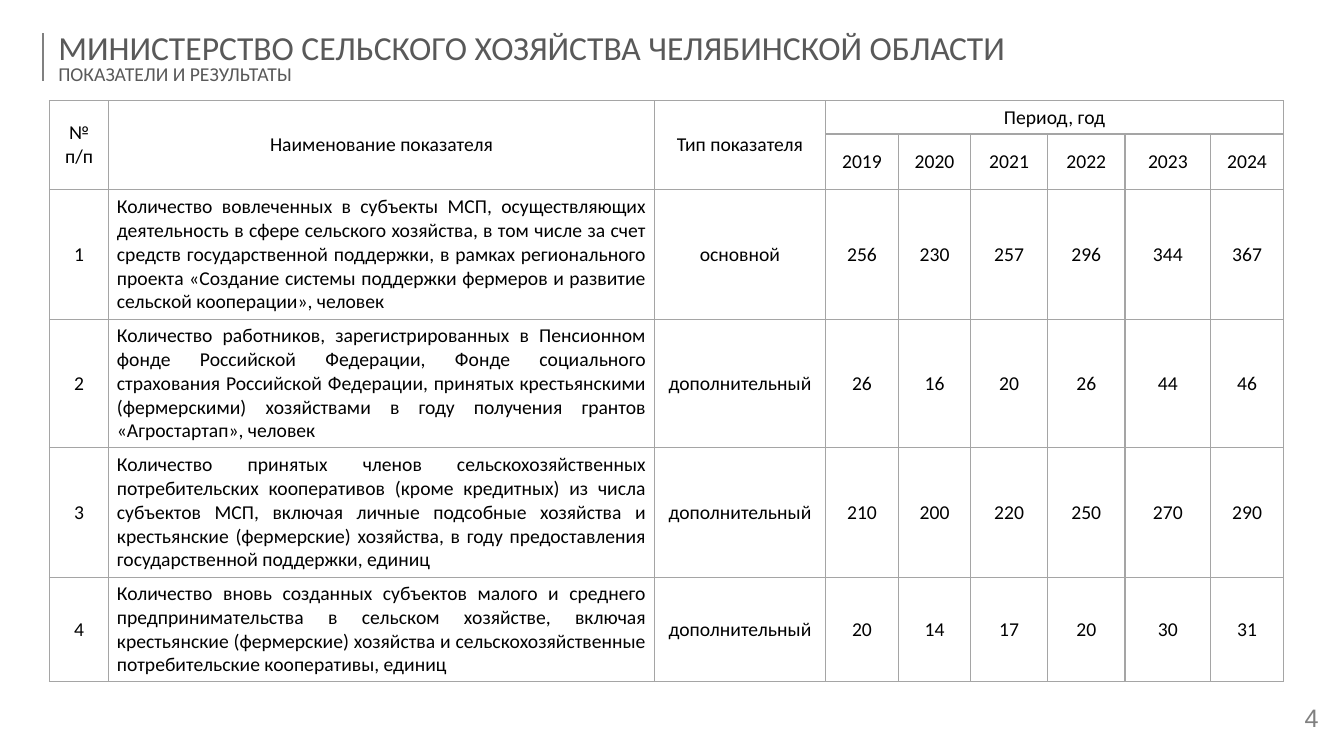
from typing import NamedTuple

from lxml import etree
from pptx import Presentation
from pptx.dml.color import RGBColor
from pptx.enum import shapes, text
from pptx.oxml import ns
from pptx.util import Inches, Pt

HUES = {"rule": "808080", "title": "595959", "ink": "000000", "grid": "A5A5A5"}
COLS = [0.59, 5.41, 1.7, 0.72, 0.72, 0.76, 0.77, 0.85, 0.72]
ROWS = [0.33, 0.55, 1.29, 1.27, 1.29, 1.03]
YEARS = range(2019, 2025)
LEFT, MID, JUST = text.PP_ALIGN.LEFT, text.PP_ALIGN.CENTER, text.PP_ALIGN.JUSTIFY


class Line(NamedTuple):
    words: str
    size: int
    font: str
    hue: str
    align: text.PP_ALIGN = LEFT


class Label(NamedTuple):
    left: float
    top: float
    width: float
    height: float
    lines: list[Line]


class Goal(NamedTuple):
    name: str
    kind: str
    counts: list[int]


LABELS = [
    Label(12.43, 6.9, 1.16, 0.5, [Line("4", 18, "Arial", "rule", MID)]),
    Label(0.48, 0.26, 13.49, 0.67, [
        Line("МИНИСТЕРСТВО СЕЛЬСКОГО ХОЗЯЙСТВА ЧЕЛЯБИНСКОЙ ОБЛАСТИ", 24, "Calibri", "title"),
        Line("ПОКАЗАТЕЛИ И РЕЗУЛЬТАТЫ", 14, "Calibri", "title"),
    ]),
]
GOALS = [
    Goal("Количество вовлеченных в субъекты МСП, осуществляющих деятельность в сфере "
         "сельского хозяйства, в том числе за счет средств государственной поддержки, "
         "в рамках регионального проекта «Создание системы поддержки фермеров и развитие "
         "сельской кооперации», человек",
         "основной", [256, 230, 257, 296, 344, 367]),
    Goal("Количество работников, зарегистрированных в Пенсионном фонде Российской "
         "Федерации, Фонде социального страхования Российской Федерации, принятых "
         "крестьянскими (фермерскими) хозяйствами в году получения грантов "
         "«Агростартап», человек",
         "дополнительный", [26, 16, 20, 26, 44, 46]),
    Goal("Количество принятых членов сельскохозяйственных потребительских кооперативов "
         "(кроме кредитных) из числа субъектов МСП, включая личные подсобные хозяйства и "
         "крестьянские (фермерские) хозяйства, в году предоставления государственной "
         "поддержки, единиц",
         "дополнительный", [210, 200, 220, 250, 270, 290]),
    Goal("Количество вновь созданных субъектов малого и среднего предпринимательства в "
         "сельском хозяйстве, включая крестьянские (фермерские) хозяйства и "
         "сельскохозяйственные потребительские кооперативы, единиц",
         "дополнительный", [20, 14, 17, 20, 30, 31]),
]


def tint(hue: str) -> RGBColor:
    return RGBColor.from_string(HUES[hue])


def write(para, line: Line) -> None:
    para.text = line.words
    para.alignment = line.align
    para.font.size = Pt(line.size)
    para.font.name = line.font
    para.font.color.rgb = tint(line.hue)


def add_label(slide, label: Label) -> None:
    box = slide.shapes.add_textbox(*map(Inches, label[:4]))
    frame = box.text_frame
    frame.word_wrap = True
    frame.vertical_anchor = text.MSO_ANCHOR.MIDDLE
    for i, line in enumerate(label.lines):
        para = frame.add_paragraph() if i else frame.paragraphs[0]
        write(para, line)
        para.line_spacing = 0.8


def add_rule(slide) -> None:
    """Draw the upright bar beside the title."""
    rule = slide.shapes.add_connector(
        shapes.MSO_CONNECTOR.STRAIGHT, *map(Inches, (0.43, 0.33, 0.43, 0.8)))
    rule.line.color.rgb = tint("rule")
    rule.line.width = Pt(1.5)
    etree.SubElement(rule._element.spPr, ns.qn("a:effectLst"))


def edge(cell) -> None:
    """Give a cell thin borders on all four sides."""
    props = cell._tc.get_or_add_tcPr()
    for i, side in enumerate("LRTB"):
        line = etree.Element(ns.qn(f"a:ln{side}"), w=str(Pt(1)))
        fill = etree.SubElement(line, ns.qn("a:solidFill"))
        etree.SubElement(fill, ns.qn("a:srgbClr"), val=HUES["grid"])
        props.insert(i, line)


def fill_cell(cell, words: str, align: text.PP_ALIGN) -> None:
    cell.margin_left = cell.margin_right = Inches(0.08)
    cell.margin_top = cell.margin_bottom = Inches(0.04)
    cell.vertical_anchor = text.MSO_ANCHOR.MIDDLE
    cell.fill.background()
    edge(cell)
    write(cell.text_frame.paragraphs[0], Line(words, 14, "Calibri", "ink", align))


def add_grid(slide) -> None:
    body = [["№ п/п", "Наименование показателя", "Тип показателя", "Период, год"] + [""] * 5,
            ["", "", "", *YEARS]]
    body += [[n, goal.name, goal.kind, *goal.counts] for n, goal in enumerate(GOALS, 1)]
    table = slide.shapes.add_table(
        len(ROWS), len(COLS), *map(Inches, (0.49, 1, sum(COLS), sum(ROWS)))).table
    table.first_row = table.horz_banding = False
    for col, width in zip(table.columns, COLS):
        col.width = Inches(width)
    for row, height in zip(table.rows, ROWS):
        row.height = Inches(height)
    for r, items in enumerate(body):
        for c, item in enumerate(items):
            fill_cell(table.cell(r, c), str(item), JUST if r > 1 and c == 1 else MID)
    for c in range(3):
        table.cell(0, c).merge(table.cell(1, c))
    table.cell(0, 3).merge(table.cell(0, 8))
    for r, first in ((0, 3), (4, 3), (5, 3)):
        for c in range(first, len(COLS)):
            table.cell(r, c).text_frame.paragraphs[0].line_spacing = Pt(18)


def main() -> None:
    deck = Presentation()
    deck.slide_width, deck.slide_height = Inches(13.33), Inches(7.5)
    slide = deck.slides.add_slide(deck.slide_layouts[6])
    add_rule(slide)
    for label in LABELS:
        add_label(slide, label)
    add_grid(slide)
    deck.save("out.pptx")


if __name__ == "__main__":
    main()
